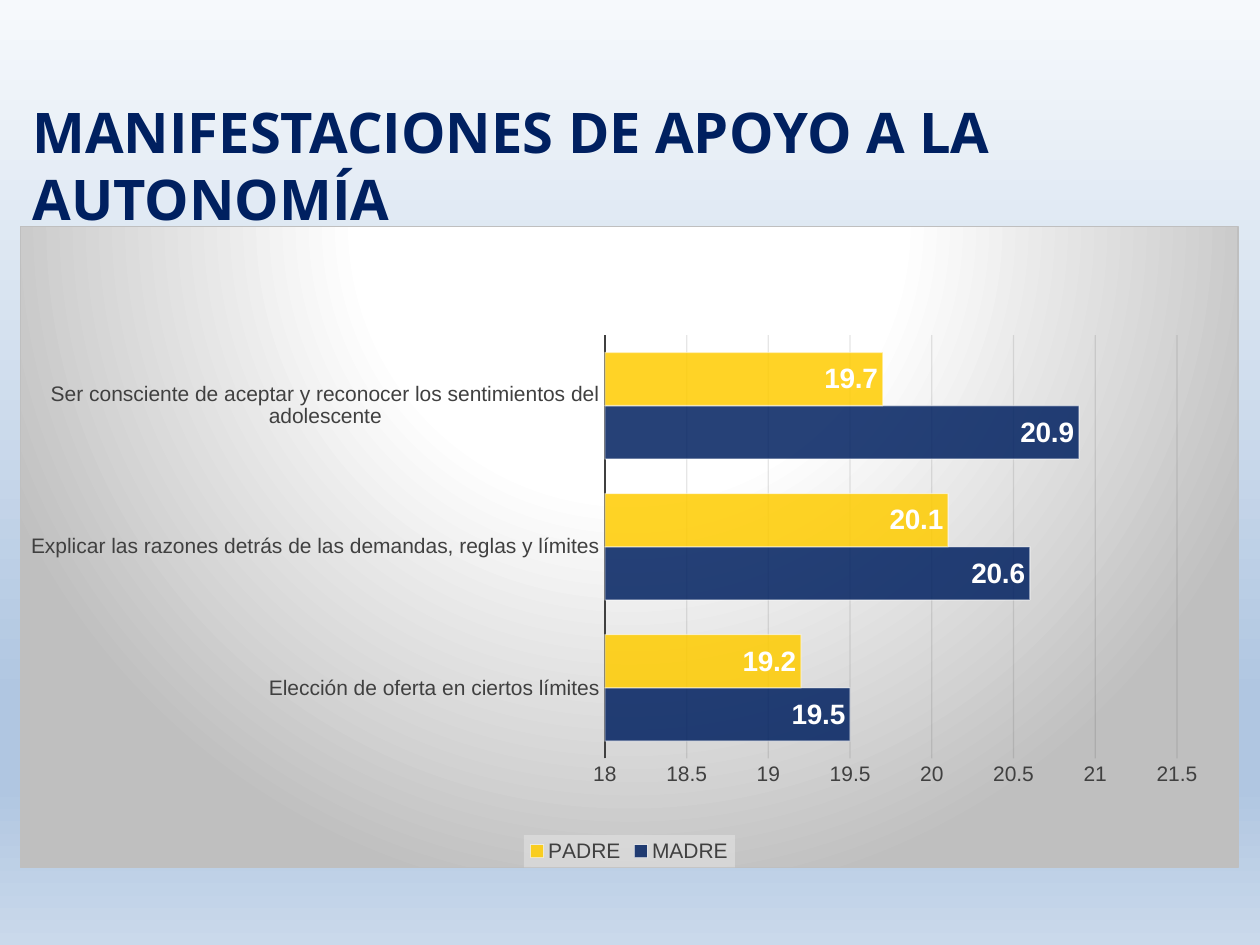
import lxml.etree
import pptx
import pptx.chart.data
import pptx.dml.color
import pptx.enum.chart
import pptx.enum.text
import pptx.oxml
import pptx.oxml.ns
import pptx.util

Inches = pptx.util.Inches
Pt = pptx.util.Pt
qn = pptx.oxml.ns.qn
RGB = pptx.dml.color.RGBColor.from_string
chart_enum = pptx.enum.chart


class Theme:
    navy, yellow, white = "002060", "FFCC00", "FFFFFF"
    ink, black, grid, edge, legend = "404040", "000000", "0D0D0D", "BFBFBF", "F2F2F2"
    sky = [(0, "F6F9FC"), (74, "B0C6E1"), (83, "B0C6E1"), (100, "CAD9EB")]
    spotlight = [(0, "FFFFFF"), (39, "FFFFFF"), (100, "BFBFBF")]
    title_font, chart_font = "Open Sans", "Arial"
    title_size, label_size, axis_size, base_size = 32, 16, 12, 10


def apply(target, values):
    for name, value in values.items():
        setattr(target, name, value)


def style_font(font, name, size, color, bold=False):
    apply(font, {"name": name, "size": Pt(size), "bold": bold})
    font.color.rgb = RGB(color)


def style_line(line, color, width):
    line.color.rgb = RGB(color)
    line.width = Pt(width)


def fade(properties, part, percent):
    color = properties.find(f"{part}/{qn('a:solidFill')}/{qn('a:srgbClr')}"
                            if part else f"{qn('a:solidFill')}/{qn('a:srgbClr')}")
    lxml.etree.SubElement(color, qn("a:alpha")).set("val", str(percent * 1000))


def gradient(stops, direction):
    marks = "".join(f'<a:gs pos="{at * 1000}"><a:srgbClr val="{color}"/></a:gs>'
                    for at, color in stops)
    return (f'<a:gradFill {pptx.oxml.ns.nsdecls("a")} rotWithShape="1">'
            f"<a:gsLst>{marks}</a:gsLst>{direction}</a:gradFill>")


def solid(color, percent=100):
    return (f'<a:solidFill><a:srgbClr val="{color}">'
            f'<a:alpha val="{percent * 1000}"/></a:srgbClr></a:solidFill>')


def area_properties(fill, line):
    return pptx.oxml.parse_xml(
        f'<c:spPr {pptx.oxml.ns.nsdecls("c", "a")}>{fill}{line}</c:spPr>')


class SlideBuilder:
    def __init__(self, slide, theme):
        self.slide = slide
        self.theme = theme

    def background(self):
        fill = self.slide.background.fill
        fill.solid()
        old = next(self.slide._element.iter(qn("a:solidFill")))
        sky = gradient(self.theme.sky, '<a:lin ang="5400000" scaled="0"/>')
        old.getparent().replace(old, pptx.oxml.parse_xml(sky))

    def title(self, words, box):
        frame = self.slide.shapes.add_textbox(*map(Inches, box)).text_frame
        apply(frame, {"word_wrap": True,
                      "vertical_anchor": pptx.enum.text.MSO_ANCHOR.MIDDLE})
        run = frame.paragraphs[0].add_run()
        run.text = words
        style_font(run.font, self.theme.title_font, self.theme.title_size,
                   self.theme.navy, True)

    def bar_chart(self, categories, parents, box, plot_box):
        theme = self.theme
        scores = pptx.chart.data.CategoryChartData()
        scores.categories = categories
        for name, values, _ in parents:
            scores.add_series(name, values)
        chart = self.slide.shapes.add_chart(
            chart_enum.XL_CHART_TYPE.BAR_CLUSTERED, *map(Inches, box), scores).chart
        apply(chart, {"has_title": False, "has_legend": True})
        style_font(chart.font, theme.chart_font, theme.base_size, theme.black)
        plot = chart.plots[0]
        apply(plot, {"gap_width": 65, "overlap": 0, "vary_by_categories": False})
        for series, (_, _, color) in zip(plot.series, parents):
            self.bars(series, color)
        self.axes(chart)
        self.legend(chart.legend)
        self.chart_area(chart)
        self.plot_layout(chart, plot_box)

    def bars(self, series, color):
        theme = self.theme
        series.format.fill.solid()
        series.format.fill.fore_color.rgb = RGB(color)
        style_line(series.format.line, theme.white, 0.75)
        properties = series._element.find(qn("c:spPr"))
        fade(properties, "", 85)
        fade(properties, qn("a:ln"), 50)
        apply(series.data_labels, {
            "show_value": True,
            "position": chart_enum.XL_LABEL_POSITION.INSIDE_END})
        style_font(series.data_labels.font, theme.chart_font, theme.label_size,
                   theme.white, True)

    def axes(self, chart):
        theme = self.theme
        for axis in (chart.category_axis, chart.value_axis):
            apply(axis, {"major_tick_mark": chart_enum.XL_TICK_MARK.NONE,
                         "minor_tick_mark": chart_enum.XL_TICK_MARK.NONE})
            style_font(axis.tick_labels.font, theme.chart_font, theme.axis_size, theme.ink)
        style_line(chart.category_axis.format.line, theme.ink, 1.5)
        values = chart.value_axis
        apply(values, {"minimum_scale": 18, "maximum_scale": 21.5,
                       "major_unit": 0.5, "has_major_gridlines": True})
        values.format.line.fill.background()
        style_line(values.major_gridlines.format.line, theme.grid, 0.75)
        grid = values._element.find(qn("c:majorGridlines"))
        fade(grid.find(qn("c:spPr")), qn("a:ln"), 10)

    def legend(self, legend):
        theme = self.theme
        apply(legend, {"position": chart_enum.XL_LEGEND_POSITION.BOTTOM,
                       "include_in_layout": False})
        style_font(legend.font, theme.chart_font, theme.axis_size, theme.ink)
        legend._element.find(qn("c:txPr")).addprevious(
            area_properties(solid(theme.legend, 39), "<a:ln><a:noFill/></a:ln>"))

    def chart_area(self, chart):
        theme = self.theme
        circle = ('<a:path path="circle"><a:fillToRect l="50000" t="-80000" '
                  'r="50000" b="180000"/></a:path>')
        border = f'<a:ln w="{Pt(0.75)}">{solid(theme.edge)}</a:ln>'
        chart._chartSpace.find(qn("c:txPr")).addprevious(
            area_properties(gradient(theme.spotlight, circle), border))

    def plot_layout(self, chart, plot_box):
        area = next(chart._chartSpace.iter(qn("c:plotArea")))
        for old in area.findall(qn("c:layout")):
            area.remove(old)
        settings = [("layoutTarget", "inner"), ("xMode", "edge"), ("yMode", "edge")]
        settings += zip("xywh", plot_box)
        rows = "".join(f'<c:{name} val="{value}"/>' for name, value in settings)
        area.insert(0, pptx.oxml.parse_xml(
            f'<c:layout {pptx.oxml.ns.nsdecls("c")}>'
            f"<c:manualLayout>{rows}</c:manualLayout></c:layout>"))


def main():
    deck = pptx.Presentation()
    apply(deck, {"slide_width": Inches(10), "slide_height": Inches(7.5)})
    theme = Theme()
    builder = SlideBuilder(deck.slides.add_slide(deck.slide_layouts[6]), theme)
    builder.background()
    builder.bar_chart(
        ["Elección de oferta en ciertos límites",
         "Explicar las razones detrás de las demandas, reglas y límites",
         "Ser consciente de aceptar y reconocer los sentimientos del adolescente"],
        [("MADRE", (19.5, 20.6, 20.9), theme.navy),
         ("PADRE", (19.2, 20.1, 19.7), theme.yellow)],
        box=(0.16, 1.79, 9.67, 5.1), plot_box=(0.48, 0.17, 0.47, 0.66))
    builder.title("MANIFESTACIONES DE APOYO A LA AUTONOMÍA", (0.16, 0.83, 8.17, 0.96))
    deck.save("out.pptx")


if __name__ == "__main__":
    main()
